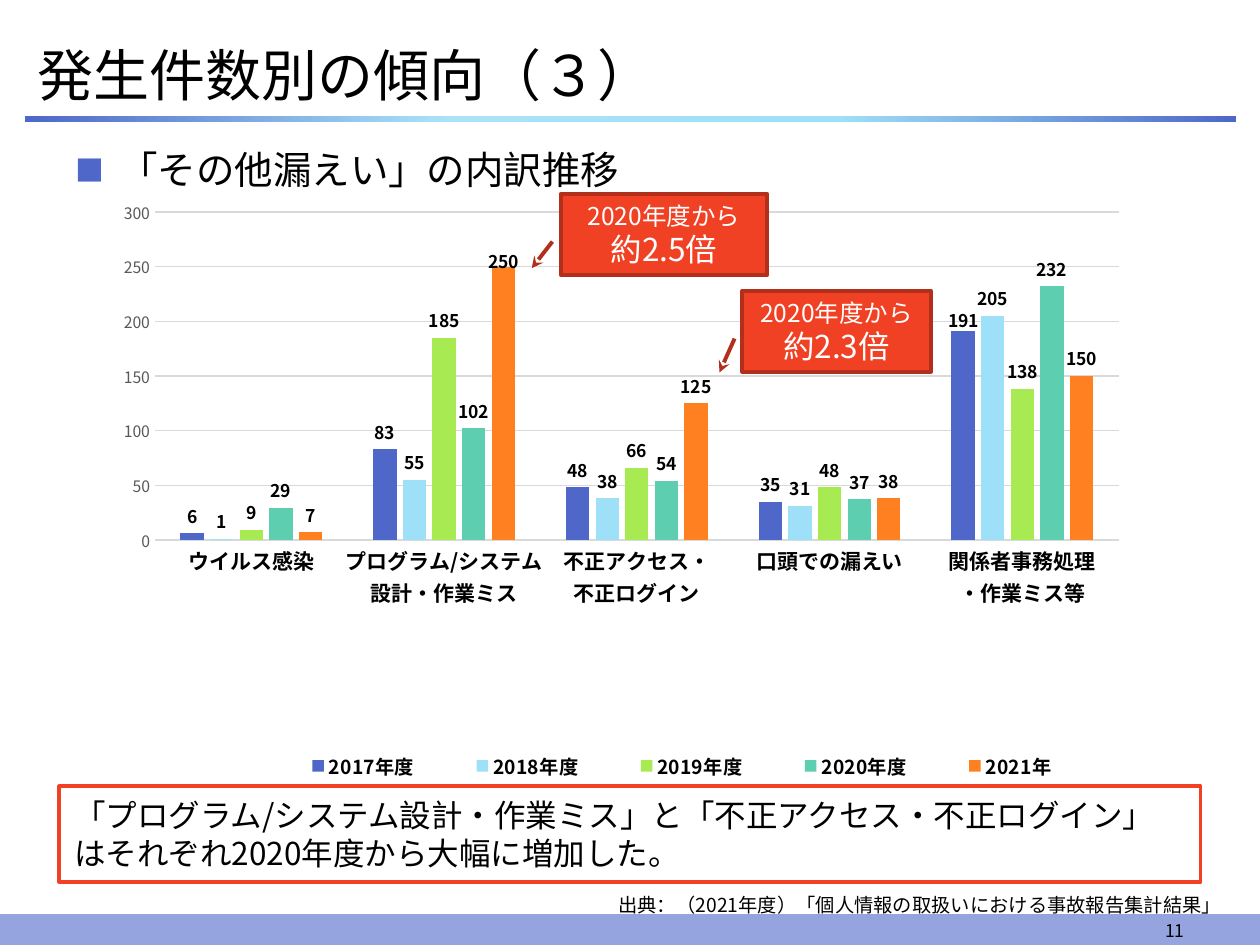
import lxml.etree
import pptx
import pptx.chart.data
import pptx.dml.color
import pptx.enum.chart
import pptx.enum.shapes
import pptx.enum.text
import pptx.oxml
import pptx.oxml.ns
import pptx.util

Inches = pptx.util.Inches
Pt = pptx.util.Pt
qn = pptx.oxml.ns.qn
ANCHOR = pptx.enum.text.MSO_ANCHOR
ALIGN = pptx.enum.text.PP_ALIGN
SHAPE = pptx.enum.shapes.MSO_SHAPE
CHART = pptx.enum.chart

FONT = "Noto Sans CJK JP"
COLORS = {
    "text": "000000", "white": "FFFFFF", "blue": "4E67C8", "sky": "9EE0F7",
    "pale": "A9E3F8", "footer": "95A4DE", "red": "F14124", "dark_red": "B2301B",
    "grid": "D9D9D9", "gray": "595959", "lime": "A7EA52", "teal": "5DCEAF",
    "orange": "FF8021",
}
CATEGORIES = ["ウイルス感染", "プログラム/システム\n設計・作業ミス",
              "不正アクセス・\n不正ログイン", "口頭での漏えい",
              "関係者事務処理\n・作業ミス等"]
SERIES = [
    ("2017年度", "blue", [6, 83, 48, 35, 191]),
    ("2018年度", "sky", [1, 55, 38, 31, 205]),
    ("2019年度", "lime", [9, 185, 66, 48, 138]),
    ("2020年度", "teal", [29, 102, 54, 37, 232]),
    ("2021年", "orange", [7, 250, 125, 38, 150]),
]
LABEL_SHIFTS = [(0, 4, 0, 0.01), (4, 1, 0, 0.02)]


def rgb(color):
    return pptx.dml.color.RGBColor.from_string(COLORS[color])


def child(parent, tag, **attrs):
    return lxml.etree.SubElement(parent, qn(tag), attrs)


def manual_layout(inner=False, **values):
    layout = pptx.oxml.parse_xml(f"<c:layout {pptx.oxml.ns.nsdecls('c')}/>")
    manual = child(layout, "c:manualLayout")
    if inner:
        child(manual, "c:layoutTarget", val="inner")
    if "w" in values:
        child(manual, "c:xMode", val="edge")
        child(manual, "c:yMode", val="edge")
    for key, value in values.items():
        child(manual, f"c:{key}", val=str(value))
    return layout


class SlideBuilder:
    def __init__(self, slide):
        self.s = slide

    def style(self, font, size, color="text", bold=False):
        font.size, font.bold, font.name = Pt(size), bold, FONT
        font.color.rgb = rgb(color)
        font._element.find(qn("a:latin")).addnext(
            lxml.etree.Element(qn("a:ea"), typeface=FONT))

    def add_lines(self, sp, lines, color="text", anchor=ANCHOR.TOP, align=ALIGN.LEFT,
                  insets=(0.1, 0.05)):
        tf = sp.text_frame
        tf.word_wrap = True
        tf.vertical_anchor = anchor
        tf.margin_left = tf.margin_right = Inches(insets[0])
        tf.margin_top = tf.margin_bottom = Inches(insets[1])
        for i, (text, size) in enumerate(lines):
            p = tf.add_paragraph() if i else tf.paragraphs[0]
            p.alignment = align
            r = p.add_run()
            r.text = text
            self.style(r.font, size, color)
        return sp

    def text(self, box, text, size, **options):
        sp = self.s.shapes.add_textbox(*map(Inches, box))
        return self.add_lines(sp, [(text, size)], **options)

    def bullet(self, box, text, size):
        p = self.text(box, text, size).text_frame.paragraphs[0]
        p.space_before = Pt(size * 0.2)
        pPr = p._p.get_or_add_pPr()
        pPr.set("marL", str(Inches(0.35)))
        pPr.set("indent", str(-Inches(0.35)))
        child(child(pPr, "a:buClr"), "a:srgbClr", val=COLORS["blue"])
        child(pPr, "a:buSzPct", val="75000")
        child(pPr, "a:buFont", typeface=FONT)
        child(pPr, "a:buChar", char="■")

    def shape(self, box, fill, line=None, width=0.75, kind=SHAPE.RECTANGLE):
        sp = self.s.shapes.add_shape(kind, *map(Inches, box))
        sp.shadow.inherit = False
        sp.fill.solid()
        sp.fill.fore_color.rgb = rgb(fill)
        if line:
            sp.line.color.rgb = rgb(line)
            sp.line.width = Pt(width)
        else:
            sp.line.fill.background()
        return sp

    def gradient_bar(self, box, stops):
        sp = self.shape(box, "blue")
        sp.fill.gradient()
        sp.fill.gradient_angle = 0
        gs_list = sp._element.spPr.find(".//" + qn("a:gsLst"))
        for gs in list(gs_list):
            gs_list.remove(gs)
        for percent, color in stops:
            gs = child(gs_list, "a:gs", pos=str(percent * 1000))
            child(gs, "a:srgbClr", val=COLORS[color])

    def callout(self, box, ratio, tip):
        sp = self.shape(box, "red", "dark_red", 2.25, SHAPE.LINE_CALLOUT_1)
        for i, value in enumerate((0.59, -0.04, *tip)):
            sp.adjustments[i] = value
        child(sp._element.spPr.find(qn("a:ln")), "a:tailEnd", type="stealth")
        self.add_lines(sp, [("2020年度から", 14), (ratio, 18)], "white",
                       ANCHOR.MIDDLE, ALIGN.CENTER, (0.08, 0.01))

    def chart(self, box):
        data = pptx.chart.data.CategoryChartData()
        data.categories = CATEGORIES
        for name, _, values in SERIES:
            data.add_series(name, values)
        chart = self.s.shapes.add_chart(
            CHART.XL_CHART_TYPE.COLUMN_CLUSTERED, *map(Inches, box), data).chart
        self.style(chart.font, 9, bold=True)
        chart.has_title = False
        plot = chart.plots[0]
        plot.vary_by_categories = False
        plot.gap_width, plot.overlap = 219, -27
        for series, (_, color, _) in zip(plot.series, SERIES):
            series.format.fill.solid()
            series.format.fill.fore_color.rgb = rgb(color)
            self.label(series.data_labels)
            series.data_labels.show_value = True
        for index, point, x, y in LABEL_SHIFTS:
            series = plot.series[index]
            self.label(series.points[point].data_label)
            idx = series._element.find(".//" + qn("c:dLbl")).find(qn("c:idx"))
            idx.addnext(manual_layout(x=x, y=y))
        self.axes(chart)
        chart.has_legend = True
        legend = chart.legend
        legend.position = CHART.XL_LEGEND_POSITION.BOTTOM
        legend.include_in_layout = False
        self.style(legend.font, 11, bold=True)
        for layout in legend._element.findall(qn("c:layout")):
            legend._element.remove(layout)
        legend._element.find(qn("c:legendPos")).addnext(
            manual_layout(x=0.18, y=0.93, w=0.75, h=0.07))
        area = chart._chartSpace.chart.plotArea
        for layout in area.findall(qn("c:layout")):
            area.remove(layout)
        area.insert(0, manual_layout(True, x=0.09, y=0.07, w=0.85, h=0.53))

    def label(self, label):
        self.style(label.font, 10, bold=True)
        label.position = CHART.XL_LABEL_POSITION.OUTSIDE_END

    def axes(self, chart):
        category, value = chart.category_axis, chart.value_axis
        for axis in (category, value):
            axis.major_tick_mark = axis.minor_tick_mark = CHART.XL_TICK_MARK.NONE
        self.style(category.tick_labels.font, 12, bold=True)
        self.style(value.tick_labels.font, 9, "gray")
        value.minimum_scale, value.maximum_scale, value.major_unit = 0, 300, 50
        value.has_major_gridlines = True
        value.format.line.fill.background()
        for line in (category.format.line, value.major_gridlines.format.line):
            line.color.rgb = rgb("grid")
            line.width = Pt(0.75)


def main():
    prs = pptx.Presentation()
    prs.slide_width, prs.slide_height = Inches(10), Inches(7.5)
    b = SlideBuilder(prs.slides.add_slide(prs.slide_layouts[6]))
    b.shape((0, 7.26, 10, 0.24), "footer", "footer")
    b.gradient_bar((0.2, 0.92, 9.61, 0.05),
                   [(0, "blue"), (35, "pale"), (67, "sky"), (100, "blue")])
    b.text((0.2, 0.26, 9.61, 0.65), "発生件数別の傾向（３）", 32, anchor=ANCHOR.MIDDLE)
    b.text((7.17, 7.21, 2.33, 0.31), "11", 10, anchor=ANCHOR.BOTTOM, align=ALIGN.RIGHT)
    b.text((4.81, 7.03, 5.19, 0.29),
           "出典：（2021年度）「個人情報の取扱いにおける事故報告集計結果」", 11,
           anchor=ANCHOR.BOTTOM)
    b.chart((0.42, 1.34, 9, 4.91))
    b.bullet((0.5, 1.11, 9, 5.93), "「その他漏えい」の内訳推移", 22)
    b.callout((4.45, 1.54, 1.64, 0.64), "約2.5倍", (0.92, -0.14))
    summary = b.shape((0.47, 6.24, 9.06, 0.76), "white", "red", 2)
    b.add_lines(summary, [("「プログラム/システム設計・作業ミス」と「不正アクセス・不正ログイン」"
                           "はそれぞれ2020年度から大幅に増加した。", 18)], insets=(0.12, 0.08))
    b.callout((5.89, 2.31, 1.5, 0.64), "約2.3倍", (1.01, -0.12))
    prs.save("out.pptx")


if __name__ == "__main__":
    main()
